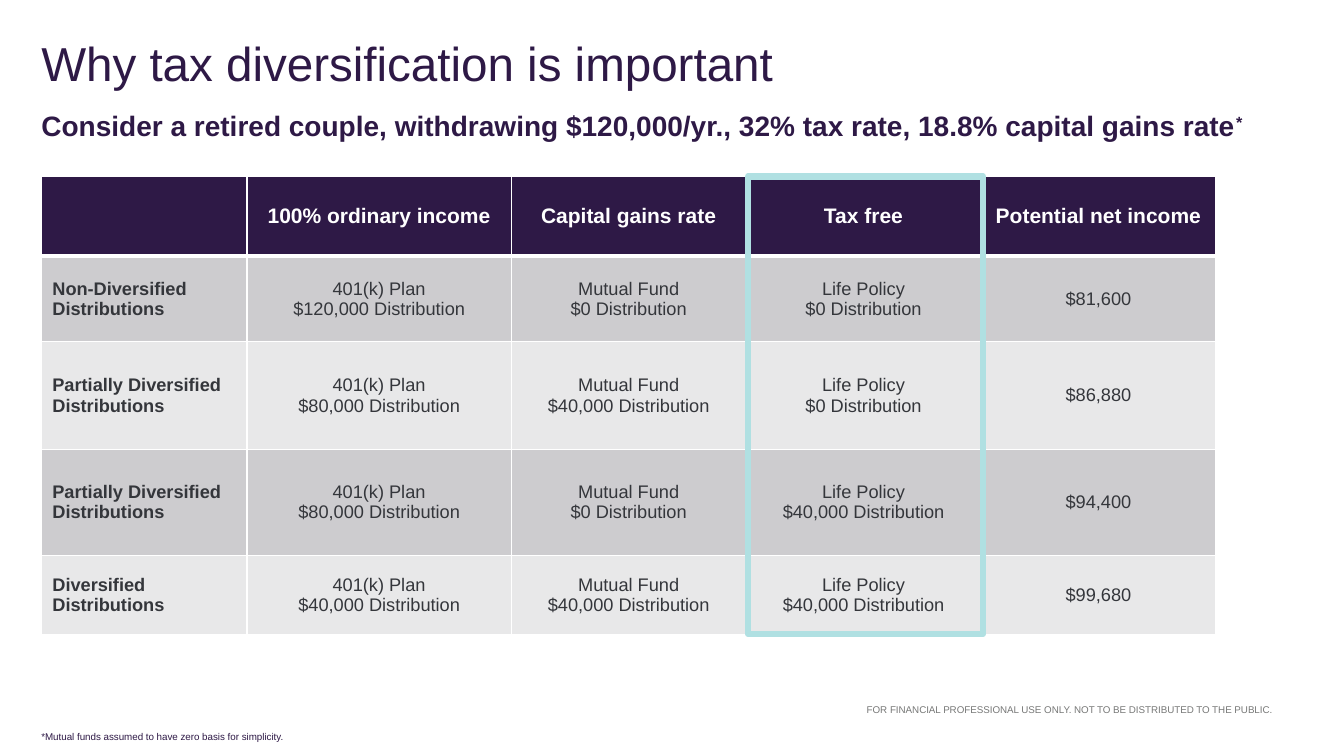
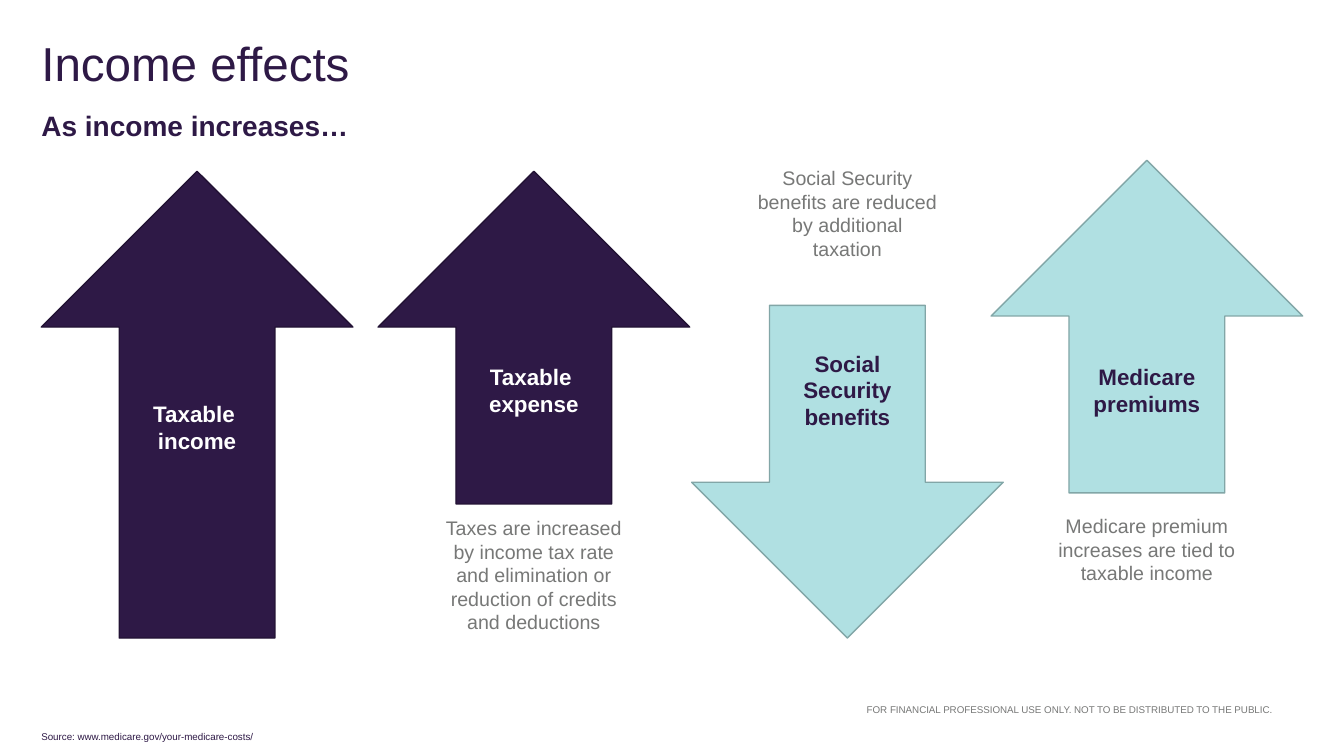
"""Build two slides on tax diversification and the effects of income."""
from dataclasses import dataclass

from lxml import etree
from pptx import Presentation
from pptx.dml.color import RGBColor
from pptx.enum import shapes, text
from pptx.oxml import ns
from pptx.util import Inches, Pt


@dataclass(frozen=True)
class Theme:
    font: str = "Arial"
    purple: str = "2E1946"
    purple_edge: str = "221234"
    aqua: str = "B0E0E2"
    aqua_edge: str = "82A6A7"
    grey: str = "777877"
    ink: str = "34363B"
    white: str = "FFFFFF"
    bands: tuple = ("CDCCCF", "E8E8E9")
    title_size: int = 34
    subtitle_size: int = 20
    label_size: int = 16
    header_size: int = 15
    caption_size: int = 14
    cell_size: int = 13
    note_size: int = 7


THEME = Theme()
LEFT = 0.41
WIDTH = 12.12
DISCLAIMER = "FOR FINANCIAL PROFESSIONAL USE ONLY. NOT TO BE DISTRIBUTED TO THE PUBLIC."

DIVERSIFICATION = {
    "title": "Why tax diversification is important",
    "subtitle": "Consider a retired couple, withdrawing $120,000/yr., 32% tax rate, "
                "18.8% capital gains rate",
    "mark": "*",
    "note": "*Mutual funds assumed to have zero basis for simplicity.",
}
EFFECTS = {
    "title": "Income effects",
    "subtitle": "As income increases…",
    "mark": "",
    "note": "Source: www.medicare.gov/your-medicare-costs/",
}

HEADERS = ["", "100% ordinary income", "Capital gains rate", "Tax free", "Potential net income"]
SOURCES = ["401(k) Plan", "Mutual Fund", "Life Policy"]
STRATEGIES = [
    ("Non-Diversified Distributions", ["$120,000", "$0", "$0"], "$81,600"),
    ("Partially Diversified Distributions", ["$80,000", "$40,000", "$0"], "$86,880"),
    ("Partially Diversified Distributions", ["$80,000", "$0", "$40,000"], "$94,400"),
    ("Diversified Distributions", ["$40,000", "$40,000", "$40,000"], "$99,680"),
]
TABLE_TOP = 1.75
COLUMNS = [2.04, 2.62, 2.33, 2.33, 2.33]
ROWS = [0.79, 0.85, 1.07, 1.05, 0.79]
TAX_FREE = HEADERS.index("Tax free")

UP, DOWN = shapes.MSO_SHAPE.UP_ARROW, shapes.MSO_SHAPE.DOWN_ARROW
DARK = (THEME.purple, THEME.purple_edge, THEME.white)
LIGHT = (THEME.aqua, THEME.aqua_edge, THEME.purple)
ARROW_WIDTH, LABEL_WIDTH, CAPTION_WIDTH = 3.09, 1.33, 2

ARROWS = [
    dict(kind=UP, left=0.41, top=1.7, height=4.63, colours=DARK,
         label="Taxable \nincome", label_top=3.92, caption="", caption_top=0),
    dict(kind=UP, left=3.75, top=1.7, height=3.3, colours=DARK,
         label="Taxable \nexpense", label_top=3.55, caption_top=5.07,
         caption="Taxes are increased by income tax rate and elimination or "
                 "reduction of credits and deductions"),
    dict(kind=DOWN, left=6.86, top=3.03, height=3.3, colours=LIGHT,
         label="Social Security benefits", label_top=3.42, caption_top=1.6,
         caption="Social Security benefits are reduced by additional taxation"),
    dict(kind=UP, left=9.83, top=1.59, height=3.3, colours=LIGHT,
         label="Medicare premiums", label_top=3.55, caption_top=5.05,
         caption="Medicare premium increases are tied to taxable income"),
]


def rgb(colour):
    """Turn a hex string into a colour."""
    return RGBColor.from_string(colour)


def place(shape, *sides):
    """Set left, top, width and height in inches."""
    shape.left, shape.top, shape.width, shape.height = map(Inches, sides)


def write(frame, content, size, colour=THEME.purple, bold=False,
          align=text.PP_ALIGN.LEFT, mark="", spacing=None):
    """Fill a text frame, one paragraph a line, with an optional raised mark."""
    for index, line in enumerate(content.split("\n")):
        para = frame.add_paragraph() if index else frame.paragraphs[0]
        para.alignment = align
        if spacing:
            para.line_spacing = spacing
        for words in filter(None, (line, mark)):
            span = para.add_run()
            span.text = words
            span.font.name, span.font.size, span.font.bold = THEME.font, Pt(size), bold
            span.font.color.rgb = rgb(colour)
            if words == mark:
                span._r.get_or_add_rPr().set("baseline", "30000")


def set_frame(frame, anchor=text.MSO_ANCHOR.TOP, flush=True):
    """Wrap a text frame, fix its size and optionally drop its margins."""
    frame.word_wrap = True
    frame.auto_size = text.MSO_AUTO_SIZE.NONE
    frame.vertical_anchor = anchor
    if flush:
        frame.margin_left = frame.margin_top = frame.margin_right = frame.margin_bottom = 0


def add_text(page, sides, content, anchor=text.MSO_ANCHOR.TOP, flush=True, **format):
    """Add a formatted text box."""
    box = page.shapes.add_textbox(*map(Inches, sides))
    set_frame(box.text_frame, anchor, flush)
    write(box.text_frame, content, **format)


def add_figure(page, kind, sides, fill, edge, weight):
    """Add a preset shape, hollow when no fill is given."""
    figure = page.shapes.add_shape(kind, *map(Inches, sides))
    figure.shadow.inherit = False
    if fill:
        figure.fill.solid()
        figure.fill.fore_color.rgb = rgb(fill)
    else:
        figure.fill.background()
    figure.line.color.rgb = rgb(edge)
    figure.line.width = Pt(weight)


def add_page(deck, content):
    """Add a slide with its title, subtitle, note and disclaimer."""
    page = deck.slides.add_slide(deck.slide_layouts[5])
    title = page.shapes.title
    place(title, LEFT, 0.42, WIDTH, 0.65)
    set_frame(title.text_frame)
    write(title.text_frame, content["title"], THEME.title_size, spacing=0.85)
    add_text(page, (LEFT, 1.08, WIDTH, 0.51), content["subtitle"],
             size=THEME.subtitle_size, bold=True, mark=content["mark"])
    add_text(page, (LEFT, 7.25, 9.55, 0.16), content["note"], size=THEME.note_size)
    add_text(page, (7.15, 6.98, 5.47, 0.12), DISCLAIMER, anchor=text.MSO_ANCHOR.BOTTOM,
             size=THEME.note_size, colour=THEME.grey, align=text.PP_ALIGN.RIGHT)
    return page


def set_borders(cell, top, bottom):
    """Draw white cell borders with the given top and bottom weights."""
    properties = cell._tc.get_or_add_tcPr()
    for side, weight in (("L", 1), ("R", 1), ("T", top), ("B", bottom)):
        line = etree.SubElement(properties, ns.qn(f"a:ln{side}"), w=str(Pt(weight)))
        fill = etree.SubElement(line, ns.qn("a:solidFill"))
        etree.SubElement(fill, ns.qn("a:srgbClr"), val=THEME.white)


def add_strategy_table(page):
    """Add the table of distribution strategies."""
    records = [HEADERS] + [
        [name, *(f"{source}\n{amount} Distribution" for source, amount in zip(SOURCES, amounts)), net]
        for name, amounts, net in STRATEGIES]
    sides = (LEFT, TABLE_TOP, sum(COLUMNS), sum(ROWS))
    table = page.shapes.add_table(len(ROWS), len(COLUMNS), *map(Inches, sides)).table
    for column, width in zip(table.columns, COLUMNS):
        column.width = Inches(width)
    for row, height in zip(table.rows, ROWS):
        row.height = Inches(height)
    for r, record in enumerate(records):
        header = r == 0
        for c, content in enumerate(record):
            cell = table.cell(r, c)
            set_borders(cell, 3 if r == 1 else 1, 3 if header else 1)
            cell.fill.solid()
            cell.fill.fore_color.rgb = rgb(THEME.purple if header else THEME.bands[(r - 1) % 2])
            cell.vertical_anchor = text.MSO_ANCHOR.MIDDLE
            cell.margin_left = cell.margin_right = Inches(0.11)
            cell.margin_top = cell.margin_bottom = Inches(0.06)
            write(cell.text_frame, content,
                  size=THEME.header_size if header else THEME.cell_size,
                  colour=THEME.white if header else THEME.ink,
                  bold=header or c == 0,
                  align=text.PP_ALIGN.CENTER if c else text.PP_ALIGN.LEFT)


def add_arrow(page, arrow):
    """Add an arrow with its label and caption centred on its axis."""
    fill, edge, label_colour = arrow["colours"]
    sides = (arrow["left"], arrow["top"], ARROW_WIDTH, arrow["height"])
    add_figure(page, arrow["kind"], sides, fill, edge, 1)
    axis = arrow["left"] + ARROW_WIDTH / 2
    add_text(page, (axis - LABEL_WIDTH / 2, arrow["label_top"], LABEL_WIDTH, 0.64),
             arrow["label"], flush=False, size=THEME.label_size, colour=label_colour,
             bold=True, align=text.PP_ALIGN.CENTER)
    if arrow["caption"]:
        add_text(page, (axis - CAPTION_WIDTH / 2, arrow["caption_top"], CAPTION_WIDTH, 1.04),
                 arrow["caption"], flush=False, size=THEME.caption_size, colour=THEME.grey,
                 align=text.PP_ALIGN.CENTER)


def main():
    """Build and save the deck."""
    deck = Presentation()
    deck.slide_width, deck.slide_height = Inches(13.33), Inches(7.5)

    page = add_page(deck, DIVERSIFICATION)
    add_strategy_table(page)
    highlight = (LEFT + sum(COLUMNS[:TAX_FREE]) + 0.02, TABLE_TOP, COLUMNS[TAX_FREE], 4.54)
    add_figure(page, shapes.MSO_SHAPE.RECTANGLE, highlight, None, THEME.aqua, 4.5)

    page = add_page(deck, EFFECTS)
    for arrow in ARROWS:
        add_arrow(page, arrow)

    deck.save("out.pptx")


if __name__ == "__main__":
    main()
